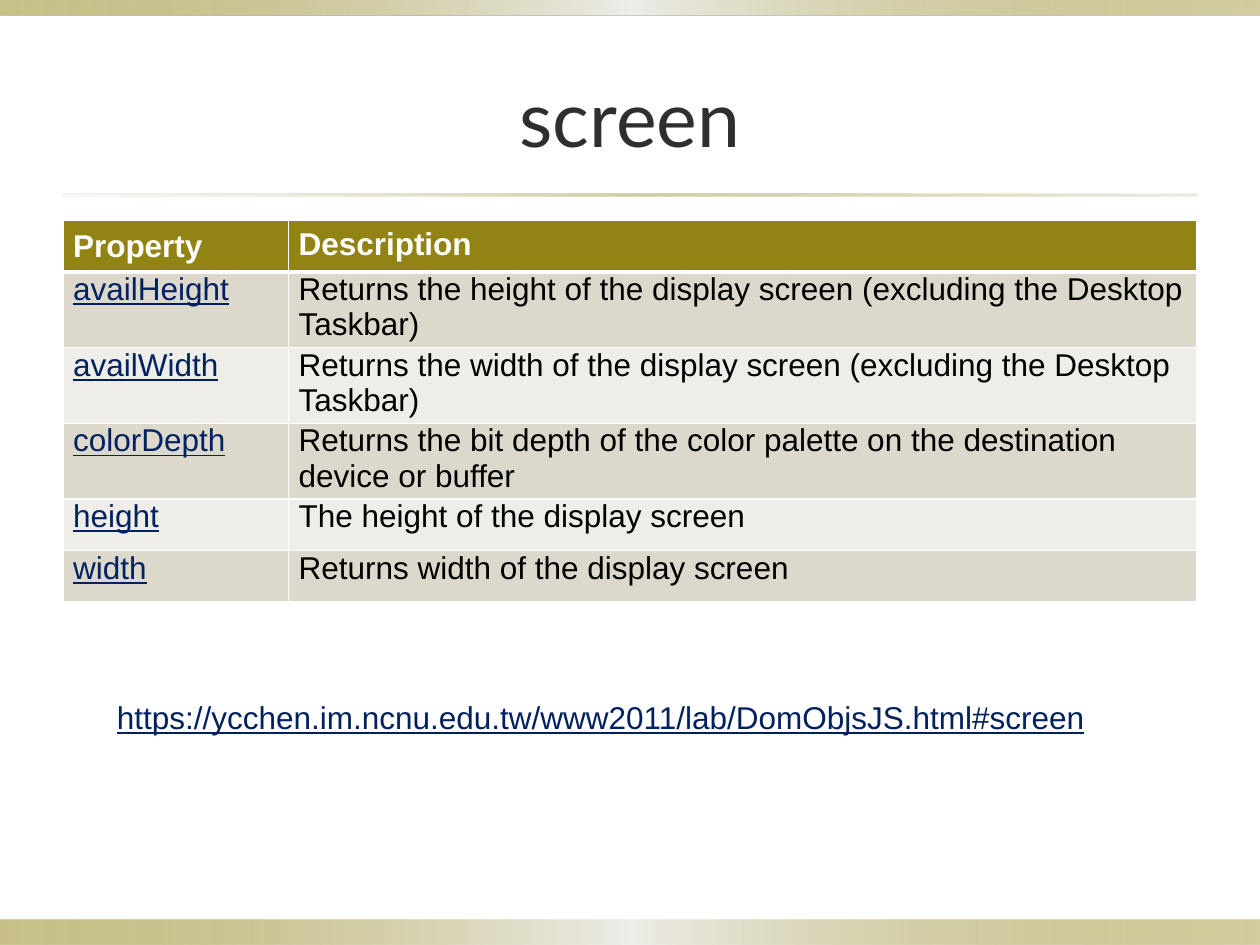
from dataclasses import dataclass

from lxml.etree import SubElement
from pptx import Presentation
from pptx.dml.color import RGBColor
from pptx.enum.shapes import MSO_SHAPE
from pptx.enum.text import MSO_ANCHOR, PP_ALIGN
from pptx.oxml.ns import qn
from pptx.util import Inches, Pt


@dataclass(frozen=True)
class Theme:
    heading_font: str = "Lato"
    body_font: str = "Arial"
    title_size: int = 44
    body_size: int = 18
    title: str = "2F2F2F"
    text: str = "000000"
    link: str = "002060"
    olive: str = "918415"
    white: str = "FFFFFF"
    bands: tuple = ("DCD9CC", "EEEDE8")


def box(*lengths):
    return [Inches(n) for n in lengths]


class SlideBuilder:
    def __init__(self, slide, theme):
        self.s = slide
        self.theme = theme

    def format_text(self, p, text, color, **values):
        r = p.add_run()
        r.text = text
        font = {"name": self.theme.body_font, "size": Pt(self.theme.body_size)}
        for key, value in {**font, **values}.items():
            setattr(r.font, key, value)
        r.font.color.rgb = RGBColor.from_string(color)

    def gradient_bar(self, at, stops):
        """Draw a bar; each stop is (position, colour, opacity), in percent."""
        sp = self.s.shapes.add_shape(MSO_SHAPE.RECTANGLE, *box(*at))
        sp.shadow.inherit = False
        sp.line.fill.background()
        sp.fill.gradient()
        sp.fill.gradient_angle = 0
        gs_list = sp._element.spPr.find(".//" + qn("a:gsLst"))
        for gs in list(gs_list):
            gs_list.remove(gs)
        for position, color, opacity in stops:
            gs = SubElement(gs_list, qn("a:gs"), pos=str(position * 1000))
            clr = SubElement(gs, qn("a:srgbClr"), val=color)
            SubElement(clr, qn("a:alpha"), val=str(opacity * 1000))

    def title(self, at, text):
        sp = self.s.shapes.title
        sp.left, sp.top, sp.width, sp.height = box(*at)
        tf = sp.text_frame
        tf.vertical_anchor = MSO_ANCHOR.MIDDLE
        p = tf.paragraphs[0]
        p.alignment = PP_ALIGN.CENTER
        self.format_text(p, text, self.theme.title, name=self.theme.heading_font,
                         size=Pt(self.theme.title_size))

    def cell_borders(self, cell, **widths):
        """Set border widths in points by side: L, R, T, B."""
        tc_pr = cell._tc.get_or_add_tcPr()
        for side, width in widths.items():
            ln = SubElement(tc_pr, qn(f"a:ln{side}"), w=str(Pt(width)))
            fill = SubElement(ln, qn("a:solidFill"))
            SubElement(fill, qn("a:srgbClr"), val=self.theme.white)

    def table(self, at, col_widths, row_heights, rows):
        t = self.theme
        table = self.s.shapes.add_table(len(rows), len(col_widths), *box(*at)).table
        for col, width in zip(table.columns, col_widths):
            col.width = Inches(width)
        for row, height in zip(table.rows, row_heights):
            row.height = Inches(height)
        for i, texts in enumerate(rows):
            header = i == 0
            for j, text in enumerate(texts):
                cell = table.cell(i, j)
                self.cell_borders(cell, L=1, R=1, T=3 if i == 1 else 1,
                                  B=3 if header else 1)
                cell.fill.solid()
                fill = t.olive if header else t.bands[(i - 1) % 2]
                cell.fill.fore_color.rgb = RGBColor.from_string(fill)
                padded = header and j == 1
                margins = (0.08, 0.05, 0.1, 0.05) if padded else (0.08, 0, 0, 0)
                for side, margin in zip(("left", "top", "right", "bottom"), margins):
                    setattr(cell, f"margin_{side}", Inches(margin))
                if header and j == 0:
                    cell.vertical_anchor = MSO_ANCHOR.MIDDLE
                is_link = not header and j == 0
                color = t.white if header else t.link if is_link else t.text
                self.format_text(cell.text_frame.paragraphs[0], text, color,
                                 bold=header, underline=is_link)

    def link_text(self, at, text):
        tf = self.s.shapes.add_textbox(*box(*at)).text_frame
        tf.word_wrap = False
        self.format_text(tf.paragraphs[0], text, self.theme.link, underline=True)


PROPERTIES = [
    ("Property", "Description"),
    ("availHeight", "Returns the height of the display screen (excluding the Desktop Taskbar)"),
    ("availWidth", "Returns the width of the display screen (excluding the Desktop Taskbar)"),
    ("colorDepth", "Returns the bit depth of the color palette on the destination device or buffer"),
    ("height", "The height of the display screen"),
    ("width", "Returns width of the display screen"),
]


def main():
    prs = Presentation()
    prs.slide_width, prs.slide_height = box(10, 7.5)
    theme = Theme()
    title_only = prs.slide_layouts[5]
    slide = SlideBuilder(prs.slides.add_slide(title_only), theme)

    beige, pale = theme.bands
    edge_stops = [(0, theme.olive, 50), (50, pale, 100), (100, theme.olive, 40)]
    rule_stops = [(0, beige, 20), (50, theme.olive, 40), (100, beige, 50)]
    slide.gradient_bar((0, 7.3, 10, 0.2), edge_stops)
    slide.gradient_bar((0, 0, 10, 0.12), edge_stops)
    slide.gradient_bar((0.5, 1.54, 9, 0.02), rule_stops)

    slide.title((0.5, 0.3, 9, 1.25), "screen")
    slide.table((0.5, 1.75, 9, 3.02), (1.79, 7.21),
                (0.41, 0.6, 0.6, 0.6, 0.41, 0.41), PROPERTIES)
    slide.link_text((0.83, 5.49, 7.95, 0.71),
                    "https://ycchen.im.ncnu.edu.tw/www2011/lab/DomObjsJS.html#screen")
    prs.save("out.pptx")


if __name__ == "__main__":
    main()
